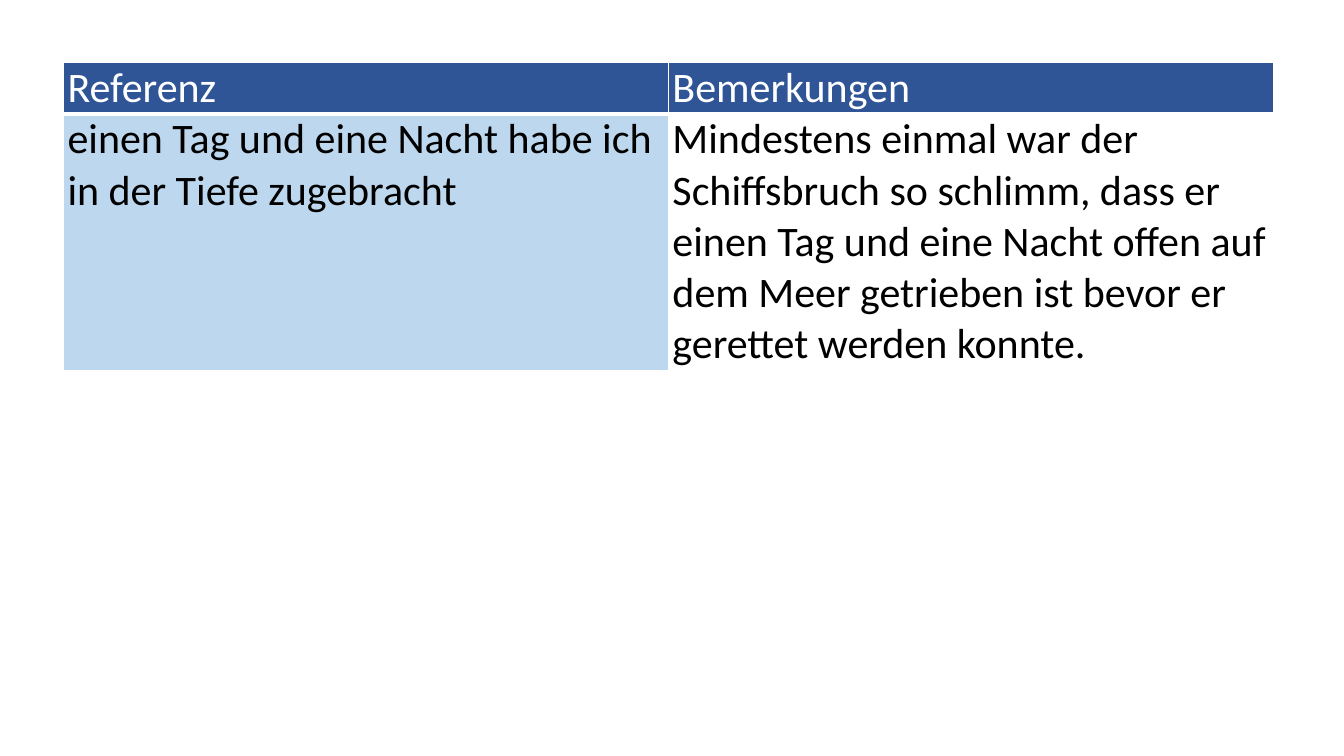
import pptx
import pptx.dml.color
import pptx.oxml
import pptx.oxml.ns
import pptx.util

Inches, Pt = pptx.util.Inches, pptx.util.Pt
RGBColor = pptx.dml.color.RGBColor

WHITE = RGBColor(0xFF, 0xFF, 0xFF)
BLACK = RGBColor(0x00, 0x00, 0x00)
DARK_BLUE = RGBColor(0x2F, 0x55, 0x97)
LIGHT_BLUE = RGBColor(0xBD, 0xD7, 0xEE)

# Each row: texts, fills, text colour, height, bottom border in points
ROWS = [
    (("Referenz", "Bemerkungen"), (DARK_BLUE, DARK_BLUE), WHITE, 0.5, 3),
    (("einen Tag und eine Nacht habe ich in der Tiefe zugebracht",
      "Mindestens einmal war der Schiffsbruch so schlimm, dass er einen Tag "
      "und eine Nacht offen auf dem Meer getrieben ist bevor er gerettet "
      "werden konnte."),
     (LIGHT_BLUE, WHITE), BLACK, 2.5, 1),
]
COLUMN_WIDTH = 6
LEFT, TOP = 0.63, 0.62
MARGINS = {"margin_left": Inches(0.04), "margin_right": Inches(0.04),
           "margin_top": 0, "margin_bottom": 0}
FONT = {"name": "Calibri", "size": Pt(30), "bold": False}


def add_border(cell, side, width, color):
    ns = pptx.oxml.ns.nsdecls("a")
    cell._tc.get_or_add_tcPr().append(pptx.oxml.parse_xml(
        f'<a:ln{side} {ns} w="{Pt(width)}"><a:solidFill>'
        f'<a:srgbClr val="{color}"/></a:solidFill></a:ln{side}>'))


def fill_cell(cell, text, fill, color, bottom):
    for name, value in MARGINS.items():
        setattr(cell, name, value)
    for side, width in (("L", 1), ("R", 1), ("T", 1), ("B", bottom)):
        add_border(cell, side, width, WHITE)
    cell.fill.solid()
    cell.fill.fore_color.rgb = fill
    r = cell.text_frame.paragraphs[0].add_run()
    r.text = text
    for name, value in FONT.items():
        setattr(r.font, name, value)
    r.font.color.rgb = color


prs = pptx.Presentation()
prs.slide_width, prs.slide_height = Inches(13.33), Inches(7.5)
slide = prs.slides.add_slide(prs.slide_layouts[6])

columns = len(ROWS[0][0])
table = slide.shapes.add_table(
    len(ROWS), columns, Inches(LEFT), Inches(TOP),
    Inches(columns * COLUMN_WIDTH), Inches(sum(row[3] for row in ROWS))).table
table.horz_banding = False
for column in table.columns:
    column.width = Inches(COLUMN_WIDTH)

for i, (texts, fills, color, height, bottom) in enumerate(ROWS):
    table.rows[i].height = Inches(height)
    for j, (text, fill) in enumerate(zip(texts, fills)):
        fill_cell(table.cell(i, j), text, fill, color, bottom)

prs.save("out.pptx")
